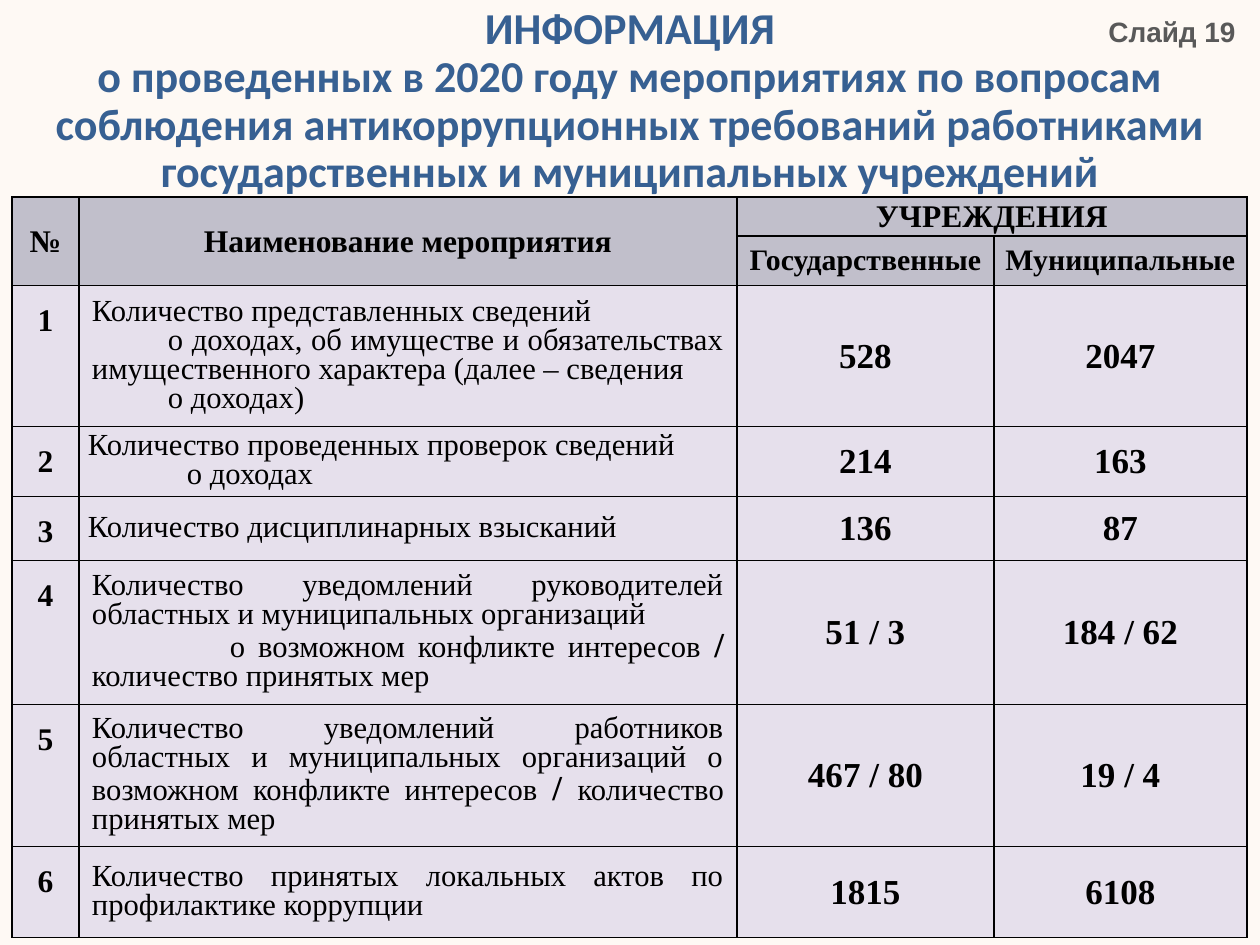
from dataclasses import dataclass

from lxml import etree
from pptx import Presentation
from pptx.dml.color import RGBColor
from pptx.enum.text import MSO_ANCHOR, MSO_AUTO_SIZE, PP_ALIGN
from pptx.oxml.ns import qn
from pptx.util import Emu, Pt

LEFT, CENTER, RIGHT, JUSTIFY = PP_ALIGN.LEFT, PP_ALIGN.CENTER, PP_ALIGN.RIGHT, PP_ALIGN.JUSTIFY
TOP, MIDDLE = MSO_ANCHOR.TOP, MSO_ANCHOR.MIDDLE
NO_AUTOFIT = MSO_AUTO_SIZE.NONE
TITLE_ONLY = 5


@dataclass(frozen=True)
class Theme:
    page: str = "FEF9F4"
    title: str = "376092"
    label: str = "595959"
    ink: str = "000000"
    header: str = "C1BFCB"
    body: str = "E6E0EC"
    title_font: str = "Calibri"
    label_font: str = "Arial"
    table_font: str = "Times New Roman"
    title_size: float = 25.2
    label_size: float = 16
    head_size: float = 18
    subhead_size: float = 17
    text_size: float = 17.5
    value_size: float = 20
    border: float = 1


THEME = Theme()


@dataclass(frozen=True)
class Line:
    """One paragraph of a measure; a slash in it is set large and bold."""
    text: str
    indent: int = 0


@dataclass(frozen=True)
class Measure:
    lines: tuple[Line, ...]
    state: str
    municipal: str
    wide: bool = True


COLUMNS = (67, 658, 257, 253)
ROWS = (39, 47, 141, 70, 64, 144, 142, 91)
WIDE, TIGHT = (13, 6), (9, 0)

MEASURES = (
    Measure((Line("Количество представленных сведений"),
             Line("о доходах, об имуществе и обязательствах имущественного "
                  "характера (далее – сведения", 76),
             Line("о доходах)", 76)), "528", "2047"),
    Measure((Line("Количество проведенных проверок сведений"),
             Line("о доходах", 99)), "214", "163", wide=False),
    Measure((Line("Количество дисциплинарных взысканий"),), "136", "87", wide=False),
    Measure((Line("Количество уведомлений руководителей областных и "
                  "муниципальных организаций"),
             Line("о возможном конфликте интересов / количество принятых мер", 138)),
            "51 / 3", "184 / 62"),
    Measure((Line("Количество уведомлений работников областных и муниципальных "
                  "организаций о возможном конфликте интересов / "
                  "количество принятых мер"),), "467 / 80", "19 / 4"),
    Measure((Line("Количество принятых локальных актов по профилактике коррупции"),),
            "1815", "6108"),
)


def px(value: int) -> Emu:
    return Emu(round(value * 914400 / 126))


def write(para, text: str, *, size: float, font: str = THEME.table_font,
          color: str = THEME.ink, bold: bool = True, align=CENTER,
          spacing: float = 1.0) -> None:
    para.alignment = align
    para.line_spacing = spacing
    span = para.add_run()
    span.text = text
    span.font.size = Pt(size)
    span.font.name = font
    span.font.bold = bold
    span.font.color.rgb = RGBColor.from_string(color)


def format_cell(cell, fill: str) -> None:
    properties = cell._tc.get_or_add_tcPr()
    for side in ("lnL", "lnR", "lnT", "lnB"):
        line = etree.SubElement(properties, qn(f"a:{side}"), w=str(Pt(THEME.border)))
        solid = etree.SubElement(line, qn("a:solidFill"))
        etree.SubElement(solid, qn("a:srgbClr"), val=THEME.ink)
    cell.fill.solid()
    cell.fill.fore_color.rgb = RGBColor.from_string(fill)


def place(cell, insets: tuple[int, int], anchor=MIDDLE) -> None:
    cell.margin_left = cell.margin_right = px(insets[0])
    cell.margin_top = cell.margin_bottom = px(insets[1])
    cell.vertical_anchor = anchor


def write_cell(cell, text: str, size: float, insets: tuple[int, int] = TIGHT,
               anchor=MIDDLE, spacing: float = 1.0) -> None:
    place(cell, insets, anchor)
    write(cell.text_frame.paragraphs[0], text, size=size, spacing=spacing)


def write_lines(cell, measure: Measure) -> None:
    place(cell, WIDE if measure.wide else TIGHT)
    frame = cell.text_frame
    for index, line in enumerate(measure.lines):
        para = frame.add_paragraph() if index else frame.paragraphs[0]
        if line.indent:
            para._p.get_or_add_pPr().set("indent", str(px(line.indent)))
        before, slash, after = line.text.partition("/ ")
        for text, strong in ((before, False), (slash, True), (after, False)):
            if text:
                write(para, text, size=THEME.value_size if strong else THEME.text_size,
                      bold=strong, align=JUSTIFY, spacing=0.85)


def draw_heading(page) -> None:
    label = page.shapes.add_textbox(px(1082), px(8), px(166), px(47))
    label.text_frame.word_wrap = True
    write(label.text_frame.paragraphs[0], "Слайд 19", size=THEME.label_size,
          font=THEME.label_font, color=THEME.label, align=RIGHT)

    title = page.shapes.title
    title.left, title.top, title.width, title.height = px(0), px(9), px(1260), px(186)
    frame = title.text_frame
    frame.word_wrap = True
    frame.auto_size = NO_AUTOFIT
    frame.vertical_anchor = MIDDLE
    para = frame.paragraphs[0]
    style = dict(size=THEME.title_size, font=THEME.title_font,
                 color=THEME.title, spacing=0.9)
    write(para, "ИНФОРМАЦИЯ", **style)
    para.add_line_break()
    write(para, "о проведенных в 2020 году мероприятиях по вопросам соблюдения "
                "антикоррупционных требований работниками государственных и "
                "муниципальных учреждений", **style)


def draw_table(page) -> None:
    table = page.shapes.add_table(len(ROWS), len(COLUMNS), px(12), px(197),
                                  px(sum(COLUMNS)), px(sum(ROWS))).table
    for column, width in zip(table.columns, COLUMNS):
        column.width = px(width)
    for index, (row, height) in enumerate(zip(table.rows, ROWS)):
        row.height = px(height)
        for cell in row.cells:
            place(cell, TIGHT)
            format_cell(cell, THEME.header if index < 2 else THEME.body)

    # Two-level header
    for column, text in enumerate(("№", "Наименование мероприятия")):
        table.cell(0, column).merge(table.cell(1, column))
        write_cell(table.cell(0, column), text, THEME.head_size, WIDE)
    table.cell(0, 2).merge(table.cell(0, 3))
    write_cell(table.cell(0, 2), "УЧРЕЖДЕНИЯ", THEME.head_size)
    for column, text in enumerate(("Государственные", "Муниципальные"), 2):
        write_cell(table.cell(1, column), text, THEME.subhead_size)

    # Numbered measures
    for number, measure in enumerate(MEASURES, 1):
        number_cell, name_cell, state_cell, municipal_cell = table.rows[number + 1].cells
        write_cell(number_cell, str(number), THEME.head_size, anchor=TOP, spacing=1.5)
        write_lines(name_cell, measure)
        write_cell(state_cell, measure.state, THEME.value_size)
        write_cell(municipal_cell, measure.municipal, THEME.value_size)


def main() -> None:
    deck = Presentation()
    deck.slide_width, deck.slide_height = px(1260), px(945)
    page = deck.slides.add_slide(deck.slide_layouts[TITLE_ONLY])
    page.background.fill.solid()
    page.background.fill.fore_color.rgb = RGBColor.from_string(THEME.page)
    draw_heading(page)
    draw_table(page)
    deck.save("out.pptx")


if __name__ == "__main__":
    main()
